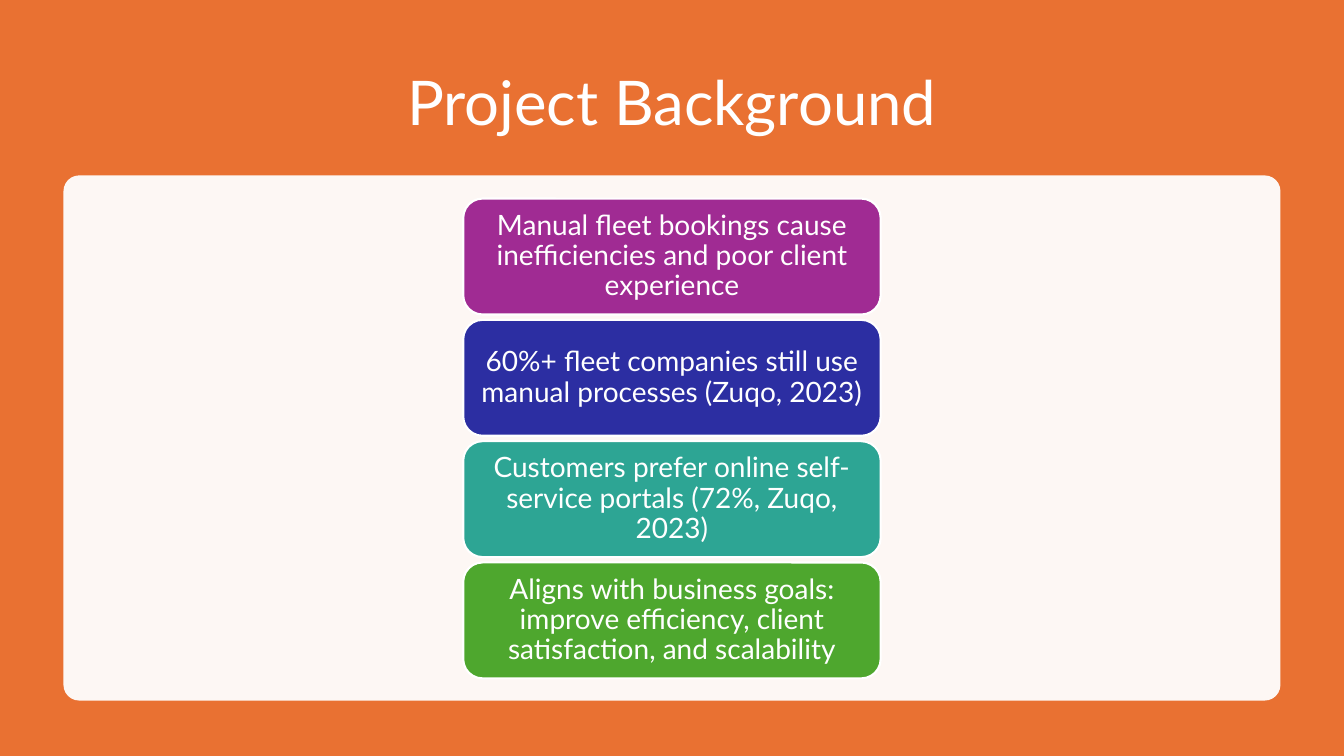
"""Build the Project Background slide: a title above a panel of four stacked cards."""
from lxml.etree import SubElement
from pptx import Presentation
from pptx.dml.color import RGBColor
from pptx.enum.shapes import MSO_SHAPE
from pptx.enum.text import MSO_ANCHOR, PP_ALIGN
from pptx.oxml.ns import qn
from pptx.util import Inches, Pt

WHITE = RGBColor(0xFF, 0xFF, 0xFF)
ORANGE = RGBColor(0xE9, 0x71, 0x32)
PURPLE = RGBColor(0xA0, 0x2B, 0x93)
BLUE = RGBColor(0x2C, 0x2E, 0xA2)
TEAL = RGBColor(0x2D, 0xA5, 0x94)
GREEN = RGBColor(0x4E, 0xA7, 0x2E)

CARDS = [
    ("Manual fleet bookings cause inefficiencies and poor client experience", PURPLE),
    ("60%+ fleet companies still use manual processes (Zuqo, 2023)", BLUE),
    ("Customers prefer online self-service portals (72%, Zuqo, 2023)", TEAL),
    ("Aligns with business goals: improve efficiency, client satisfaction, and scalability", GREEN),
]
CARD_W, CARD_H = Inches(4.14), Inches(1.15)
CARD_TOP, LAST_TOP = Inches(1.97), Inches(5.58)
CARD_PITCH = (LAST_TOP - CARD_TOP) // (len(CARDS) - 1)

prs = Presentation()
prs.slide_width, prs.slide_height = Inches(13.33), Inches(7.5)
W, H = prs.slide_width, prs.slide_height
s = prs.slides.add_slide(prs.slide_layouts[5])


def add_block(kind, left, top, width, height, color):
    sp = s.shapes.add_shape(kind, left, top, width, height)
    sp.shadow.inherit = False
    sp.fill.solid()
    sp.fill.fore_color.rgb = color
    sp.line.fill.background()
    return sp


def add_text(tf, text, size):
    tf.word_wrap = True
    tf.vertical_anchor = MSO_ANCHOR.MIDDLE
    p = tf.paragraphs[0]
    p.alignment = PP_ALIGN.CENTER
    p.line_spacing = 0.9
    r = p.add_run()
    r.text = text
    r.font.name = "Lato"
    r.font.size = Pt(size)
    r.font.color.rgb = WHITE


title = s.shapes.title
title.left, title.top = Inches(0.92), Inches(0.5)
title.width, title.height = W - 2 * title.left, Inches(1.1)
add_text(title.text_frame, "Project Background", 44)

backdrop = add_block(MSO_SHAPE.RECTANGLE, 0, 0, W, H, ORANGE)
title.element.addprevious(backdrop.element)

margin = Inches(0.63)
panel = add_block(MSO_SHAPE.ROUNDED_RECTANGLE, margin, Inches(1.74),
                  W - 2 * margin, Inches(5.21), WHITE)
panel.adjustments[0] = 0.03
panel_color = panel.element.spPr.find(qn("a:solidFill")).find(qn("a:srgbClr"))
SubElement(panel_color, qn("a:alpha"), val="95000")

for i, (text, color) in enumerate(CARDS):
    card = add_block(MSO_SHAPE.ROUNDED_RECTANGLE, (W - CARD_W) // 2,
                     CARD_TOP + i * CARD_PITCH, CARD_W, CARD_H, color)
    card.line.color.rgb = WHITE
    card.line.width = Pt(1.5)
    tf = card.text_frame
    tf.margin_left = tf.margin_right = Inches(0.08)
    tf.margin_top = tf.margin_bottom = Inches(0.04)
    add_text(tf, text, 20)

prs.save("out.pptx")
